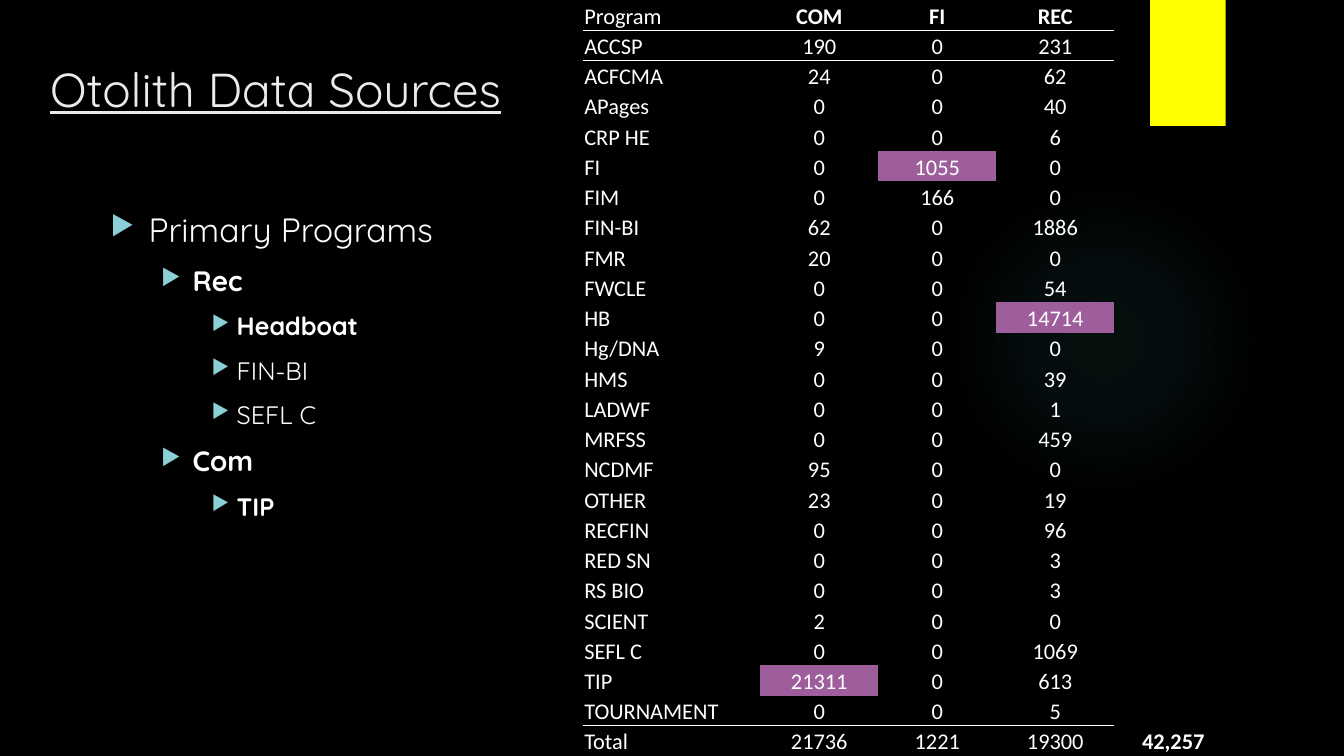
from dataclasses import dataclass

from lxml import etree
from pptx import Presentation
from pptx.dml.color import RGBColor
from pptx.enum.shapes import MSO_SHAPE
from pptx.enum.text import MSO_ANCHOR, PP_ALIGN
from pptx.oxml import parse_xml
from pptx.oxml.ns import qn
from pptx.util import Pt

RECTANGLE, OVAL = MSO_SHAPE.RECTANGLE, MSO_SHAPE.OVAL
TOP, MIDDLE, BOTTOM = MSO_ANCHOR.TOP, MSO_ANCHOR.MIDDLE, MSO_ANCHOR.BOTTOM
LEFT, CENTER = PP_ALIGN.LEFT, PP_ALIGN.CENTER
DRAWING = "http://schemas.openxmlformats.org/drawingml/2006/main"
PLAIN_TABLE = "{2D5ABB26-0587-4C30-8999-92F81FD0307C}"


@dataclass
class Theme:
    background: str = "000000"
    title: str = "EBEBEB"
    text: str = "FFFFFF"
    bullet: str = "8AD0D6"
    accent: str = "FFFF00"
    highlight: str = "9E5E9B"
    glow: str = "50B9C1"
    heading_font: str = "Quicksand"
    table_font: str = "Calibri"
    title_size: int = 34
    table_size: int = 16
    level_sizes: tuple = (24, 20, 18)
    # Text position and hanging indent of each bullet level
    level_indents: tuple = ((27, 27), (58.5, 22.5), (90, 18))


class SlideBuilder:
    def __init__(self, slide, theme):
        self.slide, self.theme = slide, theme
        self.set_fill(slide.background.fill, theme.background)

    @staticmethod
    def set_fill(fill, color):
        fill.solid()
        fill.fore_color.rgb = RGBColor.from_string(color)

    @staticmethod
    def add_run(paragraph, text, color, **formats):
        run = paragraph.add_run()
        run.text = text
        for name, value in formats.items():
            setattr(run.font, name, value)
        run.font.color.rgb = RGBColor.from_string(color)

    def shape(self, kind, box, color):
        shape = self.slide.shapes.add_shape(kind, *map(Pt, box))
        shape.shadow.inherit = False
        shape.line.fill.background()
        self.set_fill(shape.fill, color)
        return shape

    def glow(self, box, stops):
        shape = self.shape(OVAL, box, self.theme.glow)
        stop_xml = "".join(
            f'<a:gs pos="{position * 1000}"><a:srgbClr val="{self.theme.glow}">'
            f'<a:alpha val="{alpha * 1000}"/></a:srgbClr></a:gs>'
            for position, alpha in stops)
        gradient = parse_xml(
            f'<a:gradFill xmlns:a="{DRAWING}" rotWithShape="1"><a:gsLst>{stop_xml}</a:gsLst>'
            '<a:path path="circle"><a:fillToRect l="50000" t="50000" r="50000" b="50000"/>'
            '</a:path></a:gradFill>')
        properties = shape._element.spPr
        properties.replace(properties.find(qn("a:solidFill")), gradient)

    def text_frame(self, box, anchor):
        frame = self.slide.shapes.add_textbox(*map(Pt, box)).text_frame
        frame.word_wrap = True
        frame.vertical_anchor = anchor
        return frame

    def title(self, box, text):
        paragraph = self.text_frame(box, MIDDLE).paragraphs[0]
        self.add_run(paragraph, text, self.theme.title, name=self.theme.heading_font,
                     size=Pt(self.theme.title_size), underline=True)

    def bullets(self, box, items):
        frame = self.text_frame(box, TOP)
        for index, (level, text, bold) in enumerate(items):
            paragraph = frame.add_paragraph() if index else frame.paragraphs[0]
            properties = paragraph._p.get_or_add_pPr()
            margin, hanging = self.theme.level_indents[level]
            properties.set("marL", str(Pt(margin)))
            properties.set("indent", str(-Pt(hanging)))
            color = etree.SubElement(properties, qn("a:buClr"))
            etree.SubElement(color, qn("a:srgbClr"), val=self.theme.bullet)
            etree.SubElement(properties, qn("a:buSzPct"), val="80000")
            etree.SubElement(properties, qn("a:buChar"), char="▶")
            paragraph.level = level
            if index:
                paragraph.space_before = Pt(10)
            self.add_run(paragraph, text, self.theme.text, name=self.theme.heading_font,
                         size=Pt(self.theme.level_sizes[level]), bold=bold)

    def border(self, cell, side):
        line = parse_xml(
            f'<a:{side} xmlns:a="{DRAWING}" w="{Pt(1)}"><a:solidFill>'
            f'<a:srgbClr val="{self.theme.text}"/></a:solidFill></a:{side}>')
        cell._tc.get_or_add_tcPr().insert(0, line)

    def cell(self, cell, text, alignment, bold, highlighted):
        formats = {"margin_left": Pt(0.7), "margin_right": Pt(0.7), "margin_top": Pt(0.7),
                   "margin_bottom": 0, "vertical_anchor": BOTTOM}
        for name, value in formats.items():
            setattr(cell, name, value)
        if highlighted:
            self.set_fill(cell.fill, self.theme.highlight)
        else:
            cell.fill.background()
        paragraph = cell.text_frame.paragraphs[0]
        paragraph.alignment = alignment
        if text:
            self.add_run(paragraph, text, self.theme.text, name=self.theme.table_font,
                         size=Pt(self.theme.table_size), bold=bold)
        else:
            etree.SubElement(paragraph._p, qn("a:endParaRPr"),
                             sz=str(self.theme.table_size * 100))

    def table(self, left, top, widths, row_height, rows, highlights):
        last = len(rows) - 1
        frame = self.slide.shapes.add_table(
            len(rows), len(widths), Pt(left), Pt(top), Pt(sum(widths)), Pt(row_height * len(rows)))
        table = frame.table
        table.first_row = table.horz_banding = False
        table._tbl.tblPr.find(qn("a:tableStyleId")).text = PLAIN_TABLE
        for column, width in zip(table.columns, widths):
            column.width = Pt(width)
        # Rules run below the header and above the totals
        sides = {0: "lnB", 1: "lnT", last - 1: "lnB", last: "lnT"}
        for row_index, values in enumerate(rows):
            table.rows[row_index].height = Pt(row_height)
            for column_index, value in enumerate(values):
                cell = table.cell(row_index, column_index)
                grand_total = column_index == len(widths) - 1
                bold = grand_total or (row_index == 0 and column_index > 0)
                self.cell(cell, str(value), CENTER if column_index else LEFT, bold,
                          (values[0], column_index) in highlights)
                if row_index in sides and not grand_total:
                    self.border(cell, sides[row_index])


PROGRAMS = [
    ("ACCSP", 190, 0, 231), ("ACFCMA", 24, 0, 62), ("APages", 0, 0, 40),
    ("CRP HE", 0, 0, 6), ("FI", 0, 1055, 0), ("FIM", 0, 166, 0),
    ("FIN-BI", 62, 0, 1886), ("FMR", 20, 0, 0), ("FWCLE", 0, 0, 54),
    ("HB", 0, 0, 14714), ("Hg/DNA", 9, 0, 0), ("HMS", 0, 0, 39),
    ("LADWF", 0, 0, 1), ("MRFSS", 0, 0, 459), ("NCDMF", 95, 0, 0),
    ("OTHER", 23, 0, 19), ("RECFIN", 0, 0, 96), ("RED SN", 0, 0, 3),
    ("RS BIO", 0, 0, 3), ("SCIENT", 2, 0, 0), ("SEFL C", 0, 0, 1069),
    ("TIP", 21311, 0, 613), ("TOURNAMENT", 0, 0, 5),
]
PRIMARY_PROGRAMS = [
    (0, "Primary Programs", False), (1, "Rec", True), (2, "Headboat", True),
    (2, "FIN-BI", False), (2, "SEFL C", False), (1, "Com", True), (2, "TIP", True),
]


def main():
    presentation = Presentation()
    presentation.slide_width, presentation.slide_height = Pt(960), Pt(540)
    slide = presentation.slides.add_slide(presentation.slide_layouts[6])
    builder = SlideBuilder(slide, Theme())

    # Backdrop
    builder.glow((677.5, 131.75, 221.75, 221.75), [(0, 7), (36, 6), (69, 0)])
    builder.shape(RECTANGLE, (821.5, 0, 54, 90), builder.theme.accent)

    # Title and primary programs
    builder.title((28.8, 38.2, 363.6, 50.4), "Otolith Data Sources")
    builder.bullets((72, 145.5, 277.2, 330.5), PRIMARY_PROGRAMS)

    # Otolith counts by program
    rows = [("Program", "COM", "FI", "REC", ""),
            *((*program, "") for program in PROGRAMS),
            ("Total", 21736, 1221, 19300, "42,257")]
    builder.table(416.7, 0, [126.4] + [84.3] * 4, 21.6, rows,
                  {("FI", 2), ("HB", 3), ("TIP", 1)})

    presentation.save("out.pptx")


if __name__ == "__main__":
    main()
